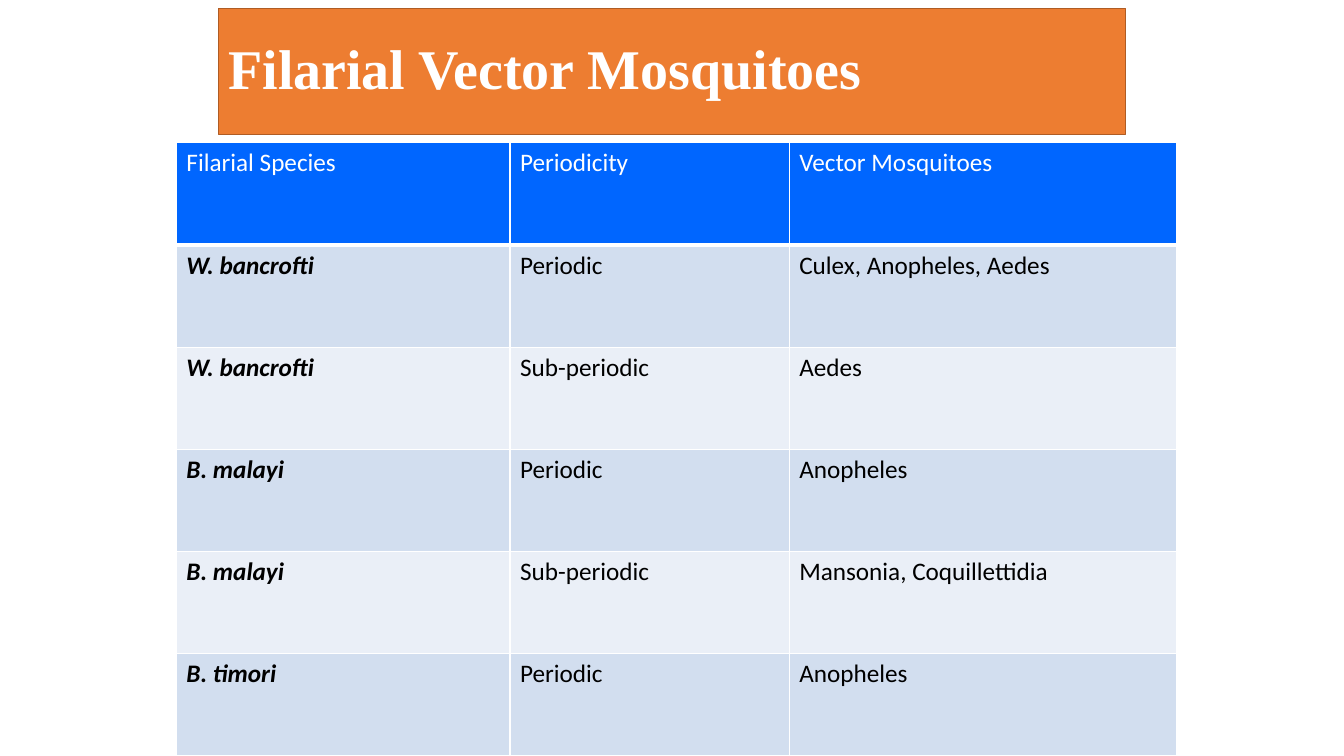
from lxml.etree import SubElement
from pptx import Presentation
from pptx.dml.color import RGBColor
from pptx.enum.text import MSO_ANCHOR, MSO_AUTO_SIZE, PP_ALIGN
from pptx.oxml.ns import qn
from pptx.util import Pt

TITLE = "Filarial Vector Mosquitoes"
COLUMN_WIDTHS = [238.3, 199.5, 276.5]
ROW_HEIGHT = 73
HEADER_FILL = "0066FF"
BAND_FILLS = ["D2DEEF", "EAEFF7"]
ROWS = [
    ["Filarial Species", "Periodicity", "Vector Mosquitoes"],
    ["W. bancrofti", "Periodic", "Culex, Anopheles, Aedes"],
    ["W. bancrofti", "Sub-periodic", "Aedes"],
    ["B. malayi", "Periodic", "Anopheles"],
    ["B. malayi", "Sub-periodic", "Mansonia, Coquillettidia"],
    ["B. timori", "Periodic", "Anopheles"],
]


def color(hex_value):
    return RGBColor.from_string(hex_value)


def paint(fill, hex_value):
    fill.solid()
    fill.fore_color.rgb = color(hex_value)


def format_text(para, font_name, size, hex_value, bold=False, italic=False):
    for span in para.runs:
        font = span.font
        font.name, font.size = font_name, Pt(size)
        font.bold, font.italic = bold, italic
        font.color.rgb = color(hex_value)


def add_border(cell, side, width):
    properties = cell._tc.get_or_add_tcPr()
    border = SubElement(properties, qn(f"a:ln{side}"), w=str(int(Pt(width))))
    solid = SubElement(border, qn("a:solidFill"))
    SubElement(solid, qn("a:srgbClr"), val="FFFFFF")


def fill_title(box):
    box.left, box.top, box.width, box.height = Pt(156), Pt(6), Pt(648), Pt(90)
    paint(box.fill, "ED7D31")
    box.line.color.rgb = color("AF5C24")
    box.line.width = Pt(1)
    frame = box.text_frame
    frame.text = TITLE
    frame.word_wrap = True
    frame.auto_size = MSO_AUTO_SIZE.NONE
    frame.vertical_anchor = MSO_ANCHOR.MIDDLE
    para = frame.paragraphs[0]
    para.alignment = PP_ALIGN.LEFT
    para.line_spacing = 0.9
    format_text(para, "Times New Roman", 40, "FFFFFF", bold=True)


def fill_cell(cell, text, row, column):
    header = row == 0
    species = column == 0 and not header
    # Borders precede the fill in the cell properties
    for side in "LRTB":
        heavy = (header and side == "B") or (row == 1 and side == "T")
        add_border(cell, side, 3 if heavy else 1)
    paint(cell.fill, HEADER_FILL if header else BAND_FILLS[(row - 1) % 2])
    cell.text_frame.text = text
    format_text(cell.text_frame.paragraphs[0], "Calibri", 18,
                "FFFFFF" if header else "000000", bold=species, italic=species)


def add_vector_table(page):
    frame = page.shapes.add_table(
        len(ROWS), len(COLUMN_WIDTHS), Pt(126), Pt(102),
        Pt(sum(COLUMN_WIDTHS)), Pt(ROW_HEIGHT * len(ROWS)))
    table = frame.table
    for column, width in zip(table.columns, COLUMN_WIDTHS):
        column.width = Pt(width)
    for row, texts in enumerate(ROWS):
        table.rows[row].height = Pt(ROW_HEIGHT)
        for column, text in enumerate(texts):
            fill_cell(table.cell(row, column), text, row, column)


def main():
    deck = Presentation()
    deck.slide_width, deck.slide_height = Pt(960), Pt(540)
    page = deck.slides.add_slide(deck.slide_layouts.get_by_name("Title Only"))
    paint(page.background.fill, "FFFFFF")
    # Title banner
    fill_title(page.shapes.title)
    # Species, periodicity and vectors
    add_vector_table(page)
    deck.save("out.pptx")


if __name__ == "__main__":
    main()
